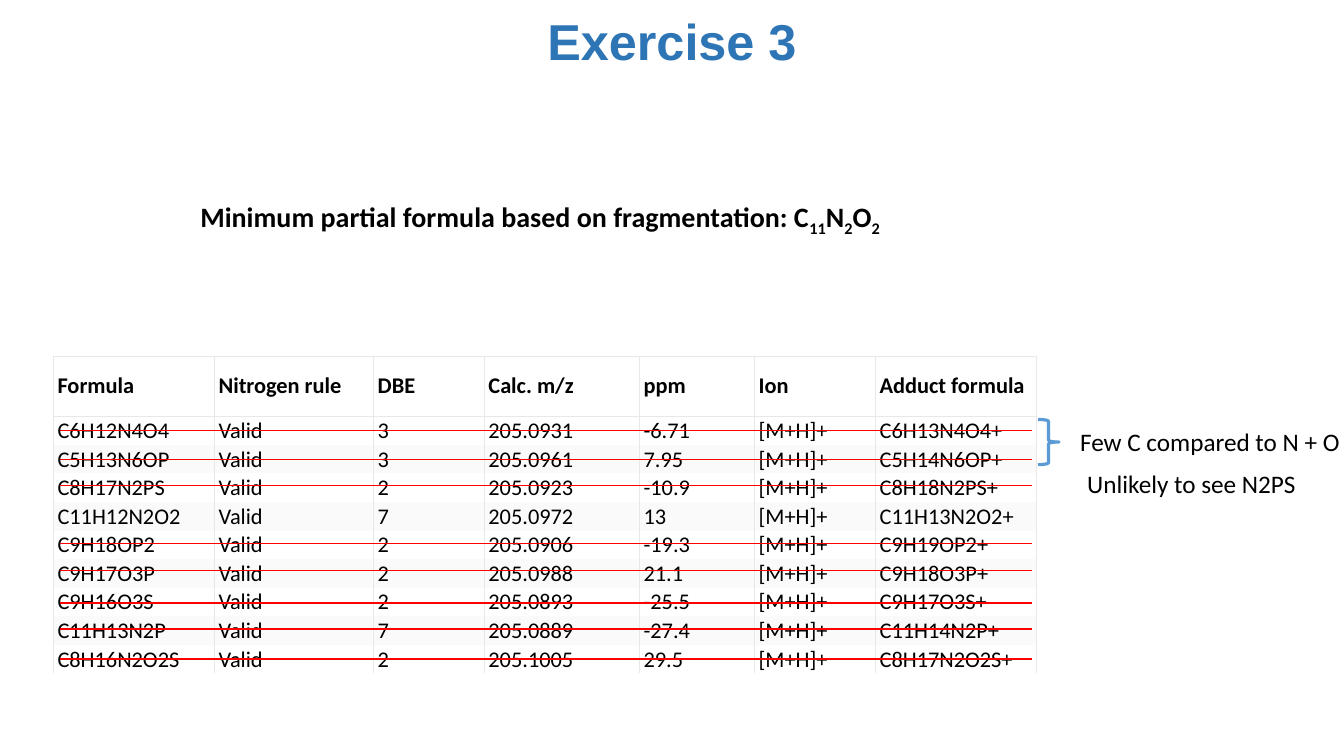
import pptx
import pptx.util
import pptx.dml.color
import pptx.enum.shapes
import pptx.enum.text
import pptx.oxml.ns
import lxml.etree

Cm = pptx.util.Cm
Pt = pptx.util.Pt
Anchor = pptx.enum.text.MSO_ANCHOR


def paint(part, shade):
    part.solid()
    part.fore_color.rgb = pptx.dml.color.RGBColor.from_string(shade)


def write(para, text, size, bold=False, shade="000000", face="Calibri"):
    run = para.add_run()
    run.text = text
    run.font.size = Pt(size)
    run.font.bold = bold
    run.font.name = face
    paint(run.font.fill, shade)
    return run


deck = pptx.Presentation()
deck.slide_width = Cm(33.87)
deck.slide_height = Cm(19.05)
slide = deck.slides.add_slide(deck.slide_layouts[6])
shapes = slide.shapes

title = shapes.add_textbox(Cm(2.33), Cm(0.28), Cm(29.21), Cm(1.68)).text_frame
title.word_wrap = True
title.vertical_anchor = Anchor.MIDDLE
head = title.paragraphs[0]
head.alignment = pptx.enum.text.PP_ALIGN.CENTER
head.line_spacing = 0.9
write(head, "Exercise 3", 36, True, "2E75B6", "Arial")

names = ["Formula", "Nitrogen rule", "DBE", "Calc. m/z", "ppm", "Ion", "Adduct formula"]
data = [
    ("C6H12N4O4", "3", "205.0931", "-6.71", "C6H13N4O4+"),
    ("C5H13N6OP", "3", "205.0961", "7.95", "C5H14N6OP+"),
    ("C8H17N2PS", "2", "205.0923", "-10.9", "C8H18N2PS+"),
    ("C11H12N2O2", "7", "205.0972", "13", "C11H13N2O2+"),
    ("C9H18OP2", "2", "205.0906", "-19.3", "C9H19OP2+"),
    ("C9H17O3P", "2", "205.0988", "21.1", "C9H18O3P+"),
    ("C9H16O3S", "2", "205.0893", "-25.5", "C9H17O3S+"),
    ("C11H13N2P", "7", "205.0889", "-27.4", "C11H14N2P+"),
    ("C8H16N2O2S", "2", "205.1005", "29.5", "C8H17N2O2S+"),
]
rows = [names]
for form, dbe, mass, ppm, adduct in data:
    rows.append([form, "Valid", dbe, mass, ppm, "[M+H]+", adduct])

wide = [4.06, 4.01, 2.79, 3.91, 2.9, 3.05, 4.04]
table = shapes.add_table(
    len(rows), len(names), Cm(1.35), Cm(8.97), Cm(sum(wide)), Cm(8)
).table
table.first_row = False
table.horz_banding = False
for col, width in zip(table.columns, wide):
    col.width = Cm(width)

for r, row in enumerate(rows):
    top = r == 0
    table.rows[r].height = Cm(1.52 if top else 0.72)
    drawn = "LRTB" if top else "LRT" if r == 1 else "LR"
    for c, text in enumerate(row):
        cell = table.cell(r, c)
        cell.vertical_anchor = Anchor.MIDDLE
        cell.margin_left = cell.margin_right = Cm(0.1)
        cell.margin_top = cell.margin_bottom = Cm(0.08 if top else 0.02)
        props = cell._tc.get_or_add_tcPr()
        for side in "LRTB":
            edge = lxml.etree.SubElement(props, pptx.oxml.ns.qn("a:ln" + side))
            edge.set("w", str(Pt(0.75)))
            if side in drawn:
                fill = lxml.etree.SubElement(edge, pptx.oxml.ns.qn("a:solidFill"))
                tint = lxml.etree.SubElement(fill, pptx.oxml.ns.qn("a:srgbClr"))
                tint.set("val", "E8E8E8")
            else:
                lxml.etree.SubElement(edge, pptx.oxml.ns.qn("a:noFill"))
        paint(cell.fill, "FAFAFA" if r and r % 2 == 0 else "FFFFFF")
        write(cell.text_frame.paragraphs[0], text, 16, top)

brace = shapes.add_shape(
    pptx.enum.shapes.MSO_SHAPE.RIGHT_BRACE, Cm(26.16), Cm(10.57), Cm(0.53), Cm(1.14)
)
brace.shadow.inherit = False
brace.fill.background()
paint(brace.line.fill, "5B9BD5")
brace.line.width = Pt(2.25)

partial = [
    ("Minimum partial formula based on fragmentation: C", 0),
    ("11", -25), ("N", 0), ("2", -25), ("O", 0), ("2", -25),
]
notes = [
    (26.97, 10.62, 7.14, 1.02, 18, False, [("Few C compared to N + O", 0)]),
    (27.15, 11.68, 5.82, 1.02, 18, False, [("Unlikely to see N2PS", 0)]),
    (4.8, 4.9, 17.91, 1.12, 20, True, partial),
]
for x, y, w, h, size, bold, parts in notes:
    frame = shapes.add_textbox(Cm(x), Cm(y), Cm(w), Cm(h)).text_frame
    frame.word_wrap = False
    frame.auto_size = pptx.enum.text.MSO_AUTO_SIZE.SHAPE_TO_FIT_TEXT
    for text, shift in parts:
        run = write(frame.paragraphs[0], text, size, bold)
        if shift:
            run.font._element.set("baseline", str(shift * 1000))

for y in [10.85, 11.58, 12.24, 13.69, 14.38, 15.19, 15.85, 16.61]:
    strike = shapes.add_connector(
        pptx.enum.shapes.MSO_CONNECTOR.STRAIGHT, Cm(1.5), Cm(y), Cm(26.01), Cm(y)
    )
    paint(strike.line.fill, "FF0000")
    strike.line.width = Pt(1)
    lxml.etree.SubElement(strike._element.spPr, pptx.oxml.ns.qn("a:effectLst"))

deck.save("out.pptx")
